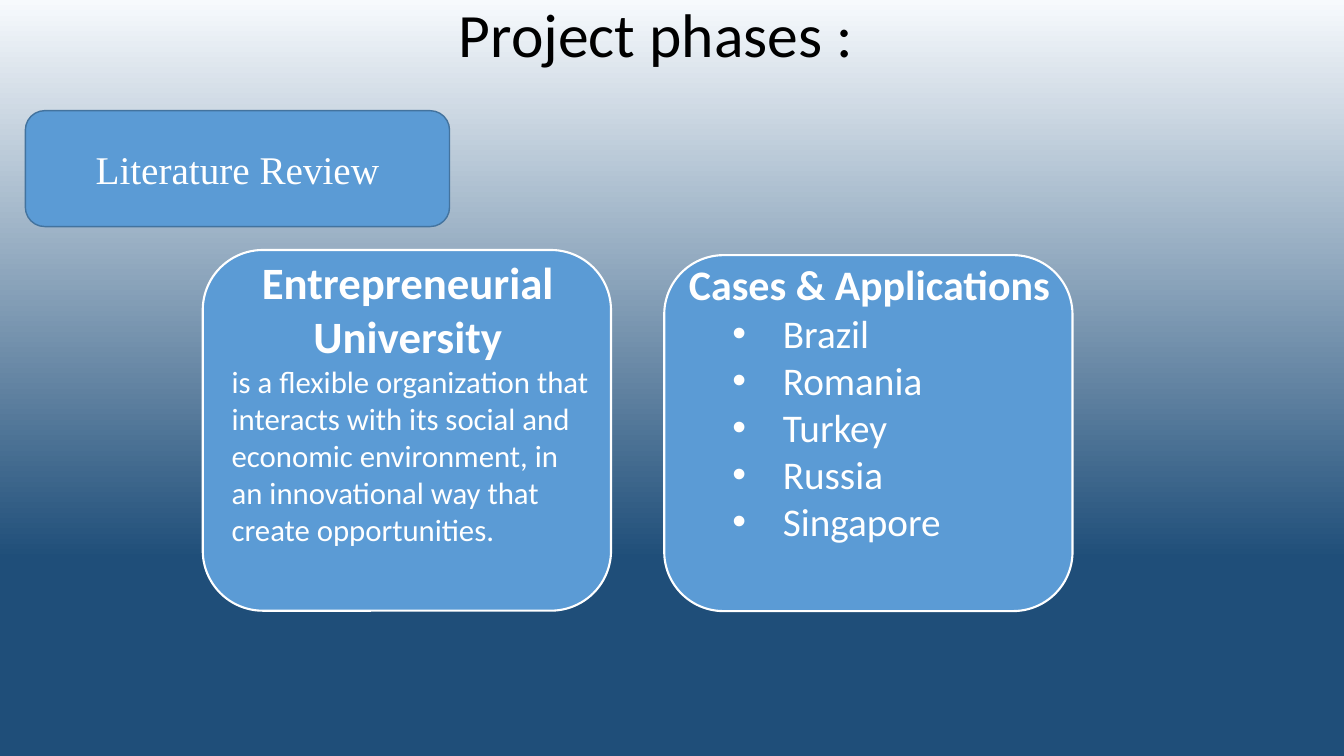
from copy import deepcopy

from lxml import etree
from pptx import Presentation
from pptx.dml.color import RGBColor
from pptx.enum.shapes import MSO_SHAPE
from pptx.enum.text import MSO_ANCHOR, PP_ALIGN
from pptx.oxml.ns import qn
from pptx.util import Cm, Pt

ROUNDED = MSO_SHAPE.ROUNDED_RECTANGLE
MIDDLE = MSO_ANCHOR.MIDDLE
CENTER, LEFT = PP_ALIGN.CENTER, PP_ALIGN.LEFT

COLORS = {
    "black": "000000",
    "white": "FFFFFF",
    "panel": "5B9BD5",
    "outline": "43739E",
    "sky": "F7FAFD",
    "navy": "1F4E79",
}
SKY_STOPS = [(0, "sky"), (74, "navy"), (100, "navy")]
COUNTRIES = ["Brazil", "Romania", "Turkey", "Russia", "Singapore"]
DEFINITION = (
    "is a flexible organization that interacts with its social and economic "
    "environment, in an innovational way that create opportunities."
)


def rgb(name):
    return RGBColor.from_string(COLORS[name])


def paint_background(slide):
    fill = slide.background.fill
    fill.gradient()
    fill.gradient_angle = 270
    stops = slide.element.find(".//" + qn("a:gsLst"))
    template = deepcopy(stops[0])
    for stop in list(stops):
        stops.remove(stop)
    for position, name in SKY_STOPS:
        stop = deepcopy(template)
        stop.set("pos", str(position * 1000))
        for color in list(stop):
            stop.remove(color)
        etree.SubElement(stop, qn("a:srgbClr"), val=COLORS[name])
        stops.append(stop)


def style(paragraph, size, color="white", face="Calibri", bold=False, align=LEFT):
    paragraph.alignment = align
    font = paragraph.font
    font.size, font.name, font.bold = Pt(size), face, bold
    font.color.rgb = rgb(color)


def place_title(slide, box):
    title = slide.shapes.title
    title.left, title.top, title.width, title.height = map(Cm, box)
    title.text_frame.text = "Project phases :"
    title.text_frame.vertical_anchor = MIDDLE
    heading = title.text_frame.paragraphs[0]
    heading.line_spacing = 0.9
    style(heading, 44, "black", align=CENTER)


def add_panel(slide, box, outline, weight):
    panel = slide.shapes.add_shape(ROUNDED, *map(Cm, box))
    panel.shadow.inherit = False
    panel.fill.solid()
    panel.fill.fore_color.rgb = rgb("panel")
    panel.line.color.rgb = rgb(outline)
    panel.line.width = Pt(weight)
    return panel


def add_phase(slide, box):
    phase = add_panel(slide, box, "outline", 1).text_frame
    phase.vertical_anchor = MIDDLE
    phase.text = "Literature Review"
    style(phase.paragraphs[0], 28, face="Times New Roman", align=CENTER)


def add_card(slide, box, inset, heading, heading_size, lines, size, margin, bulleted):
    add_panel(slide, box, "white", 1.5)
    left, top, width, height = box
    dx, dy, dw, dh = inset
    area = (left + dx, top + dy, width + dw, height + dh)
    content = slide.shapes.add_textbox(*map(Cm, area)).text_frame
    content.word_wrap = True
    content.text = heading
    style(content.paragraphs[0], heading_size, bold=True, align=CENTER)
    for line in lines:
        paragraph = content.add_paragraph()
        paragraph.text = line
        properties = paragraph._p.get_or_add_pPr()
        properties.set("marL", str(Cm(margin)))
        if bulleted:
            properties.set("indent", str(Cm(-1.27)))
            etree.SubElement(properties, qn("a:buFont"), typeface="Arial")
            etree.SubElement(properties, qn("a:buChar"), char="•")
        style(paragraph, size)


def main():
    deck = Presentation()
    deck.slide_width, deck.slide_height = Cm(33.87), Cm(19.05)
    slide = deck.slides.add_slide(deck.slide_layouts[5])
    paint_background(slide)
    place_title(slide, (1.93, -0.89, 29.21, 3.68))
    add_phase(slide, (0.64, 2.79, 10.69, 2.92))
    add_card(slide, (5.11, 6.3, 10.29, 9.09), (0.33, 0, -0.61, -1.39),
             "Entrepreneurial University", 32, [DEFINITION], 22, 0.15, False)
    add_card(slide, (16.74, 6.43, 10.29, 8.97), (0.02, -0.03, 0.02, -0.51),
             "Cases & Applications", 30, COUNTRIES, 28, 2.72, True)
    deck.save("out.pptx")


if __name__ == "__main__":
    main()
